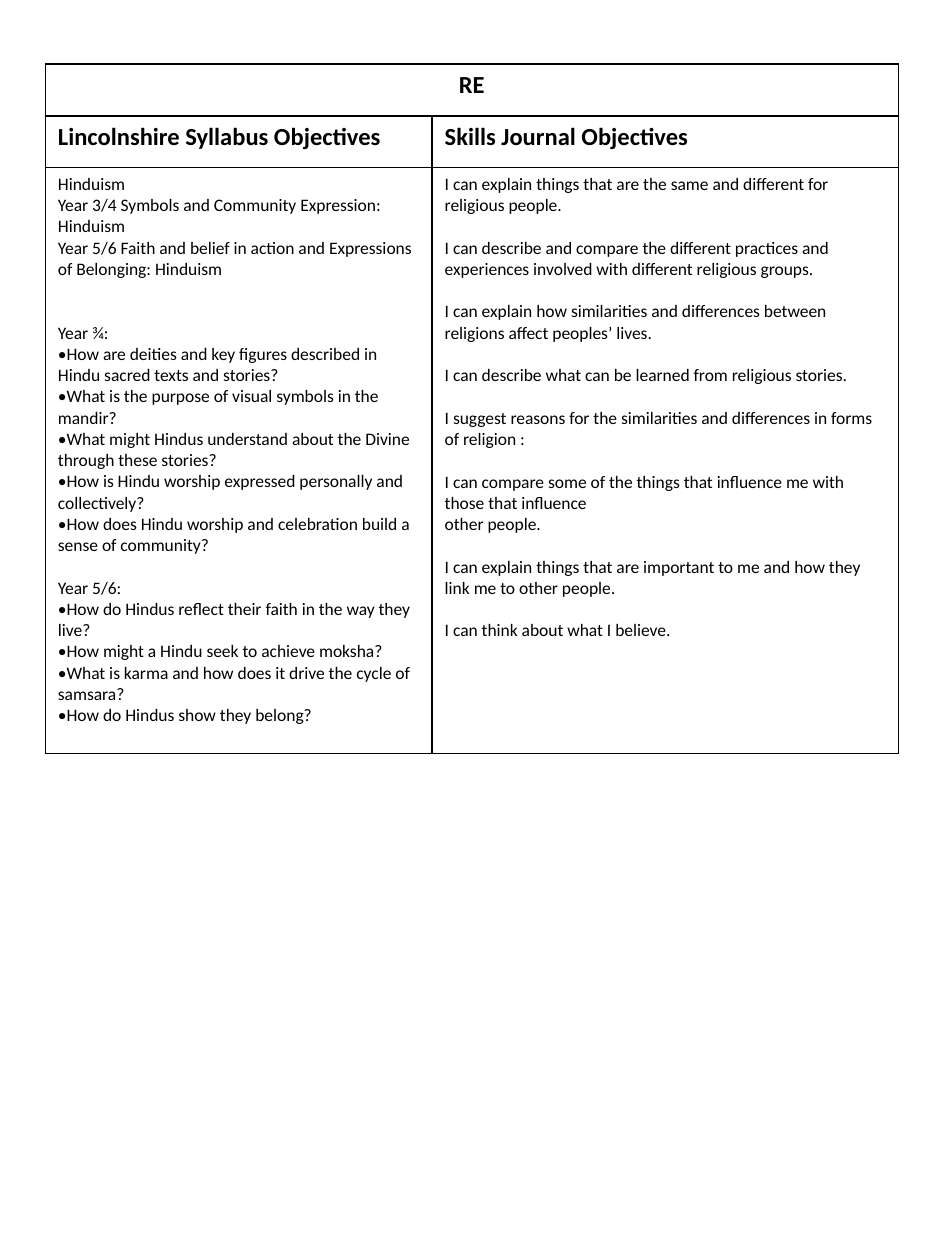
from lxml import etree
from pptx import Presentation
from pptx.dml.color import RGBColor
from pptx.enum.text import MSO_ANCHOR, PP_ALIGN
from pptx.oxml.ns import qn
from pptx.util import Inches, Pt

LEFT, CENTER = PP_ALIGN.LEFT, PP_ALIGN.CENTER
TOP = MSO_ANCHOR.TOP
BLACK = RGBColor(0, 0, 0)
LINE_GAP = 12.2
COLUMN_WIDTHS = (3.07, 3.7)
ROW_HEIGHTS = (0.41, 0.41, 4.65)
HEADING = {"name": "Calibri", "size": Pt(14), "bold": True}
BODY = {"name": "Calibri", "size": Pt(10), "bold": False}

SYLLABUS = [
    (0, ["Hinduism",
         "Year 3/4 Symbols and Community Expression: Hinduism",
         "Year 5/6 Faith and belief in action and Expressions of Belonging: Hinduism"]),
    (2, ["Year ¾:",
         "•How are deities and key figures described in Hindu sacred texts and stories?",
         "•What is the purpose of visual symbols in the mandir?",
         "•What might Hindus understand about the Divine through these stories?",
         "•How is Hindu worship expressed personally and collectively?",
         "•How does Hindu worship and celebration build a sense of community?"]),
    (1, ["Year 5/6:",
         "•How do Hindus reflect their faith in the way they live?",
         "•How might a Hindu seek to achieve moksha?",
         "•What is karma and how does it drive the cycle of samsara?",
         "•How do Hindus show they belong?"]),
]
SKILLS = [
    (0, ["I can explain things that are the same and different for religious people."]),
    (1, ["I can describe and compare the different practices and experiences "
         "involved with different religious groups."]),
    (1, ["I can explain how similarities and differences between religions "
         "affect peoples’ lives."]),
    (1, ["I can describe what can be learned from religious stories."]),
    (1, ["I suggest reasons for the similarities and differences in forms of religion :"]),
    (1, ["I can compare some of the things that influence me with those that influence",
         "other people."]),
    (1, ["I can explain things that are important to me and how they link me "
         "to other people."]),
    (1, ["I can think about what I believe."]),
]


def set_borders(cell):
    properties = cell._tc.get_or_add_tcPr()
    for position, side in enumerate(("lnL", "lnR", "lnT", "lnB")):
        line = etree.Element(qn(f"a:{side}"), w=str(Pt(1)))
        fill = etree.SubElement(line, qn("a:solidFill"))
        etree.SubElement(fill, qn("a:srgbClr"), val=str(BLACK))
        properties.insert(position, line)


def write_cell(cell, groups, style, alignment=LEFT):
    lines = [(gap if index == 0 else 0, text)
             for gap, texts in groups for index, text in enumerate(texts)]
    frame = cell.text_frame
    for index, (gap, text) in enumerate(lines):
        para = frame.add_paragraph() if index else frame.paragraphs[0]
        para.alignment = alignment
        para.space_before = Pt(gap * LINE_GAP)
        span = para.add_run()
        span.text = text
        for name, value in style.items():
            setattr(span.font, name, value)
        span.font.color.rgb = BLACK


def add_grid(page):
    frame = page.shapes.add_table(
        len(ROW_HEIGHTS), len(COLUMN_WIDTHS), Inches(0.36), Inches(0.51),
        Inches(sum(COLUMN_WIDTHS)), Inches(sum(ROW_HEIGHTS)))
    table = frame.table
    table.first_row = table.horz_banding = False
    for column, width in zip(table.columns, COLUMN_WIDTHS):
        column.width = Inches(width)
    for row, height in zip(table.rows, ROW_HEIGHTS):
        row.height = Inches(height)
    for cell in table.iter_cells():
        cell.fill.background()
        cell.vertical_anchor = TOP
        set_borders(cell)
    table.cell(0, 0).merge(table.cell(0, 1))
    return table


def main():
    deck = Presentation()
    deck.slide_width, deck.slide_height = Inches(7.5), Inches(10)
    page = deck.slides.add_slide(deck.slide_layouts[6])
    table = add_grid(page)
    write_cell(table.cell(0, 0), [(0, ["RE"])], HEADING, CENTER)
    columns = (("Lincolnshire Syllabus Objectives", SYLLABUS),
               ("Skills Journal Objectives", SKILLS))
    for index, (title, groups) in enumerate(columns):
        write_cell(table.cell(1, index), [(0, [title])], HEADING)
        write_cell(table.cell(2, index), groups, BODY)
    deck.save("out.pptx")


if __name__ == "__main__":
    main()
